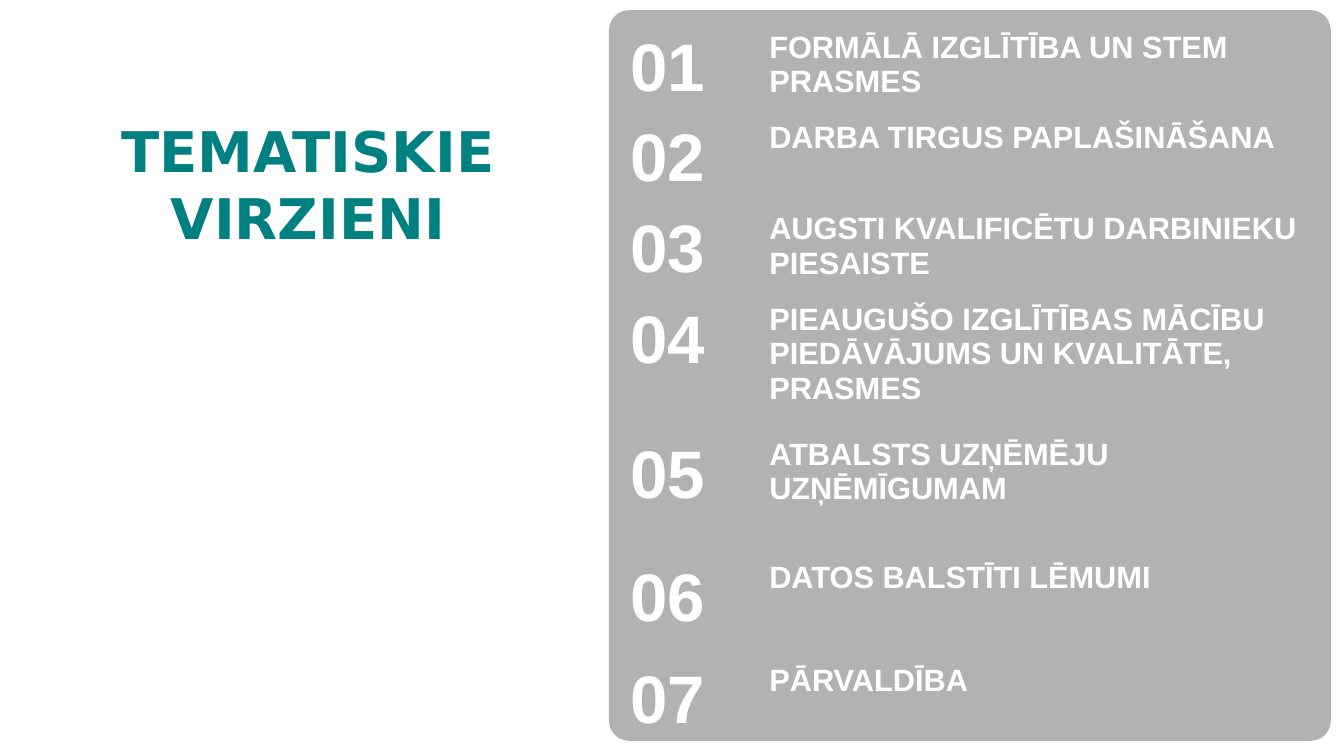
from dataclasses import dataclass

from lxml import etree
from pptx import Presentation
from pptx.dml.color import RGBColor
from pptx.enum.shapes import MSO_SHAPE
from pptx.enum.text import MSO_ANCHOR, MSO_AUTO_SIZE, PP_ALIGN
from pptx.oxml.ns import qn
from pptx.slide import Slide
from pptx.text.text import TextFrame
from pptx.util import Emu, Pt

ROUND = MSO_SHAPE.ROUNDED_RECTANGLE
MIDDLE = MSO_ANCHOR.MIDDLE
FIXED = MSO_AUTO_SIZE.NONE
CENTER = PP_ALIGN.CENTER

SCALE = 9144  # EMU per px, 100 px to the inch
TEAL, WHITE, BLACK = "008080", "FFFFFF", "000000"
NO_GRID = "{2D5ABB26-0587-4C30-8999-92F81FD0307C}"


@dataclass
class Theme:
    name: str
    height: int


THEMES = [
    Theme("FORMĀLĀ IZGLĪTĪBA UN STEM PRASMES", 90),
    Theme("DARBA TIRGUS PAPLAŠINĀŠANA", 90),
    Theme("AUGSTI KVALIFICĒTU DARBINIEKU PIESAISTE", 90),
    Theme("PIEAUGUŠO IZGLĪTĪBAS MĀCĪBU PIEDĀVĀJUMS UN KVALITĀTE, PRASMES", 134),
    Theme("ATBALSTS UZŅĒMĒJU UZŅĒMĪGUMAM", 122),
    Theme("DATOS BALSTĪTI LĒMUMI", 102),
    Theme("PĀRVALDĪBA", 90),
]


def px(length: int) -> Emu:
    return Emu(length * SCALE)


def color(code: str) -> RGBColor:
    return RGBColor.from_string(code)


def write(frame: TextFrame, text: str, size: int, face: str, code: str) -> None:
    frame.text = text
    font = frame.paragraphs[0].runs[0].font
    font.size, font.name, font.bold = Pt(size), face, True
    font.color.rgb = color(code)


def add_title(slide: Slide) -> None:
    title = slide.shapes.title
    title.left, title.top = px(31), px(110)
    title.width, title.height = px(549), px(145)
    frame = title.text_frame
    write(frame, "TEMATISKIE VIRZIENI", 40, "DejaVu Sans", TEAL)
    frame.word_wrap = True
    frame.auto_size = FIXED
    frame.vertical_anchor = MIDDLE
    frame.paragraphs[0].alignment = CENTER


def add_panel(slide: Slide) -> None:
    panel = slide.shapes.add_shape(ROUND, px(604), px(10), px(716), px(725))
    panel.adjustments[0] = 0.028
    panel.shadow.inherit = False
    panel.line.fill.background()
    panel.fill.solid()
    panel.fill.fore_color.rgb = color(BLACK)
    # Let the background through the black
    tint = panel.element.spPr.find(qn("a:solidFill"))[0]
    etree.SubElement(tint, qn("a:alpha")).set("val", "30000")


def add_themes(slide: Slide, themes: list[Theme]) -> None:
    total = sum(theme.height for theme in themes)
    holder = slide.shapes.add_table(
        len(themes), 2, px(615), px(25), px(687), px(total))
    table = holder.table
    table.first_row = table.horz_banding = False
    next(holder.element.iter(qn("a:tableStyleId"))).text = NO_GRID
    table.columns[0].width, table.columns[1].width = px(138), px(549)
    for row, theme in enumerate(themes):
        table.rows[row].height = px(theme.height)
        parts = [(f"{row + 1:02}", 48), (theme.name, 22)]
        for col, (text, size) in enumerate(parts):
            cell = table.cell(row, col)
            cell.fill.background()
            write(cell.text_frame, text, size, "Arial", WHITE)


def main() -> None:
    deck = Presentation()
    deck.slide_width, deck.slide_height = px(1333), px(750)
    slide = deck.slides.add_slide(deck.slide_layouts.get_by_name("Title Only"))
    add_title(slide)
    add_panel(slide)
    add_themes(slide, THEMES)
    deck.save("out.pptx")


if __name__ == "__main__":
    main()
